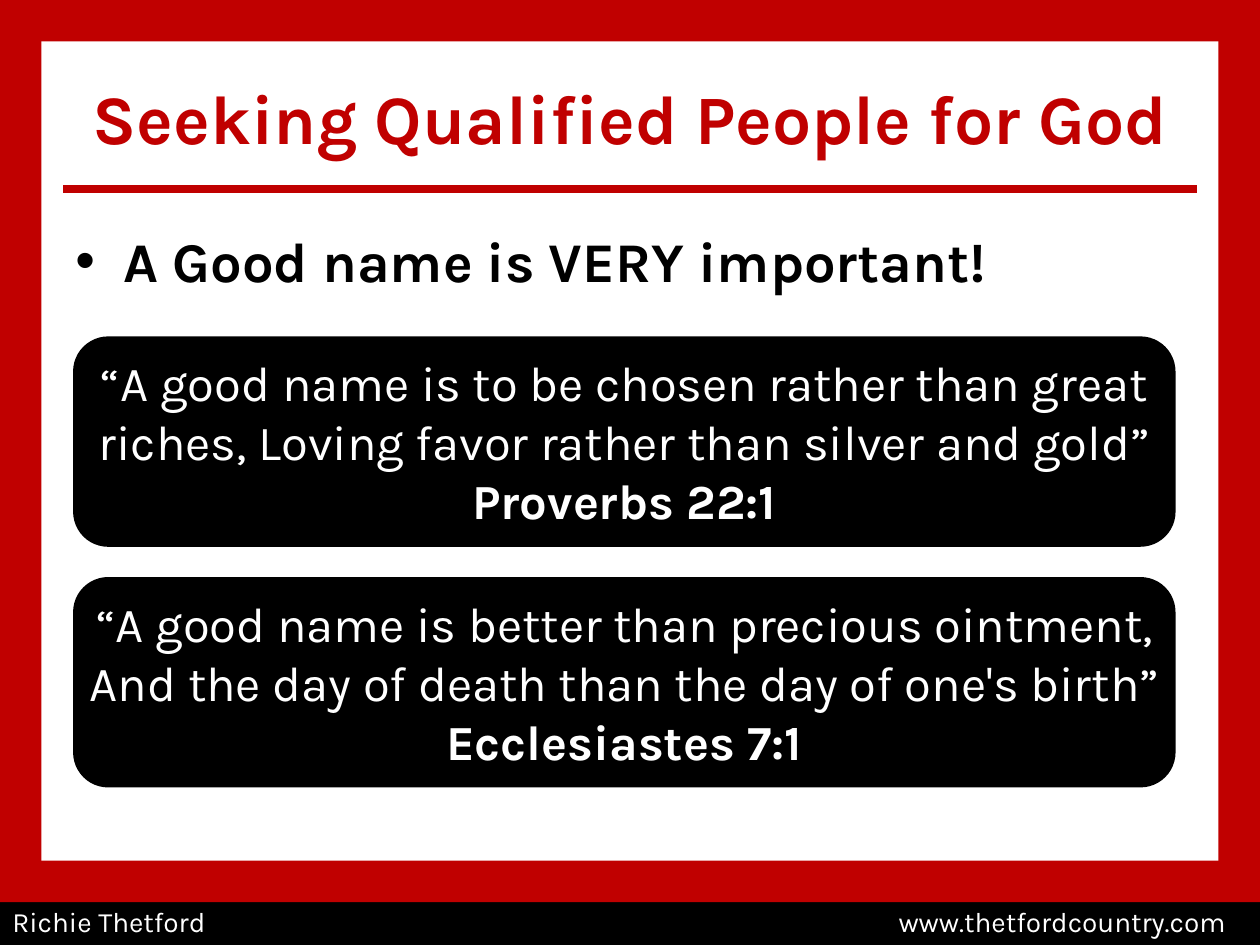
from lxml import etree
from pptx import Presentation
from pptx.dml.color import RGBColor
from pptx.enum.shapes import MSO_CONNECTOR, MSO_SHAPE
from pptx.enum.text import MSO_ANCHOR, PP_ALIGN
from pptx.oxml.ns import qn
from pptx.util import Inches, Pt

RECT, ROUNDED = MSO_SHAPE.RECTANGLE, MSO_SHAPE.ROUNDED_RECTANGLE
STRAIGHT = MSO_CONNECTOR.STRAIGHT
TOP, MIDDLE = MSO_ANCHOR.TOP, MSO_ANCHOR.MIDDLE
LEFT, CENTER = PP_ALIGN.LEFT, PP_ALIGN.CENTER
COLORS = {"red": "C00000", "black": "000000", "white": "FFFFFF"}


class Deck:
    """Holds the style and the current slide."""

    def __init__(self, width, height, font):
        self.prs = Presentation()
        self.prs.slide_width, self.prs.slide_height = Inches(width), Inches(height)
        self.font = font
        self.s = self.prs.slides.add_slide(self.prs.slide_layouts[6])

    def color(self, name):
        return RGBColor.from_string(COLORS[name])

    def shape(self, kind, box, fill):
        sp = self.s.shapes.add_shape(kind, *map(Inches, box))
        sp.shadow.inherit = False
        sp.fill.solid()
        sp.fill.fore_color.rgb = self.color(fill)
        sp.line.fill.background()
        return sp

    def rule(self, x1, x2, y, color, width):
        ln = self.s.shapes.add_connector(STRAIGHT, *map(Inches, (x1, y, x2, y)))
        ln.line.color.rgb = self.color(color)
        ln.line.width = Pt(width)
        etree.SubElement(ln._element.spPr, qn("a:effectLst"))

    def fill_text(self, sp, lines, size, color, align=LEFT, anchor=TOP):
        tf = sp.text_frame
        tf.word_wrap, tf.vertical_anchor = True, anchor
        for i, (text, bold) in enumerate(lines):
            p = tf.add_paragraph() if i else tf.paragraphs[0]
            p.alignment = align
            r = p.add_run()
            r.text = text
            r.font.color.rgb = self.color(color)
            style = {"name": self.font, "size": Pt(size), "bold": bold}
            for key, value in style.items():
                setattr(r.font, key, value)
        return tf.paragraphs[0]

    def text(self, box, *args, **kwargs):
        sp = self.s.shapes.add_textbox(*map(Inches, box))
        return self.fill_text(sp, *args, **kwargs)

    def bullet(self, box, text, size, color, indent):
        pPr = self.text(box, [(text, True)], size, color)._p.get_or_add_pPr()
        pPr.set("marL", str(Inches(indent)))
        pPr.set("indent", str(-Inches(indent)))
        etree.SubElement(pPr, qn("a:buFont"), typeface="Arial")
        etree.SubElement(pPr, qn("a:buChar"), char="•")

    def footer(self, box, left, right, size, tab):
        sp = self.shape(RECT, box, "black")
        p = self.fill_text(sp, [(f"{left}\t{right}", False)], size, "white", anchor=MIDDLE)
        tabs = etree.SubElement(p._p.get_or_add_pPr(), qn("a:tabLst"))
        etree.SubElement(tabs, qn("a:tab"), pos=str(Inches(tab)), algn="r")

    def quote(self, top, verse, reference):
        self.shape(ROUNDED, (0.58, top, 8.75, 1.67), "black")
        self.text((0.58, top + 0.08, 8.75, 1.51), [(verse, False), (reference, True)],
                  28, "white", align=CENTER)


def main():
    width, height, border = 10, 7.5, 0.33
    deck = Deck(width, height, "Karla")
    deck.text((0.5, 0.3, 9, 1.25), [("Seeking Qualified People for God", True)],
              39.6, "red", align=CENTER, anchor=MIDDLE)
    deck.bullet((0.5, 1.75, 9, 0.7), "A Good name is VERY important!", 32, "black", 0.38)
    for x in (0, width - border):
        deck.shape(RECT, (x, 0, border, height), "red")
    deck.footer((0, 7.13, width, 0.37), "Richie Thetford", "www.thetfordcountry.com",
                16, 9.63)
    for y in (0, 6.83):
        deck.shape(RECT, (0, y, width, border), "red")
    deck.rule(0.5, 9.5, 1.5, "red", 4.5)
    quotes = [
        ("“A good name is to be chosen rather than great riches, "
         "Loving favor rather than silver and gold”", "Proverbs 22:1"),
        ("“A good name is better than precious ointment, "
         "And the day of death than the day of one's birth”", "Ecclesiastes 7:1"),
    ]
    for i, (verse, reference) in enumerate(quotes):
        deck.quote(2.67 + i * 1.91, verse, reference)
    deck.prs.save("out.pptx")


if __name__ == "__main__":
    main()
